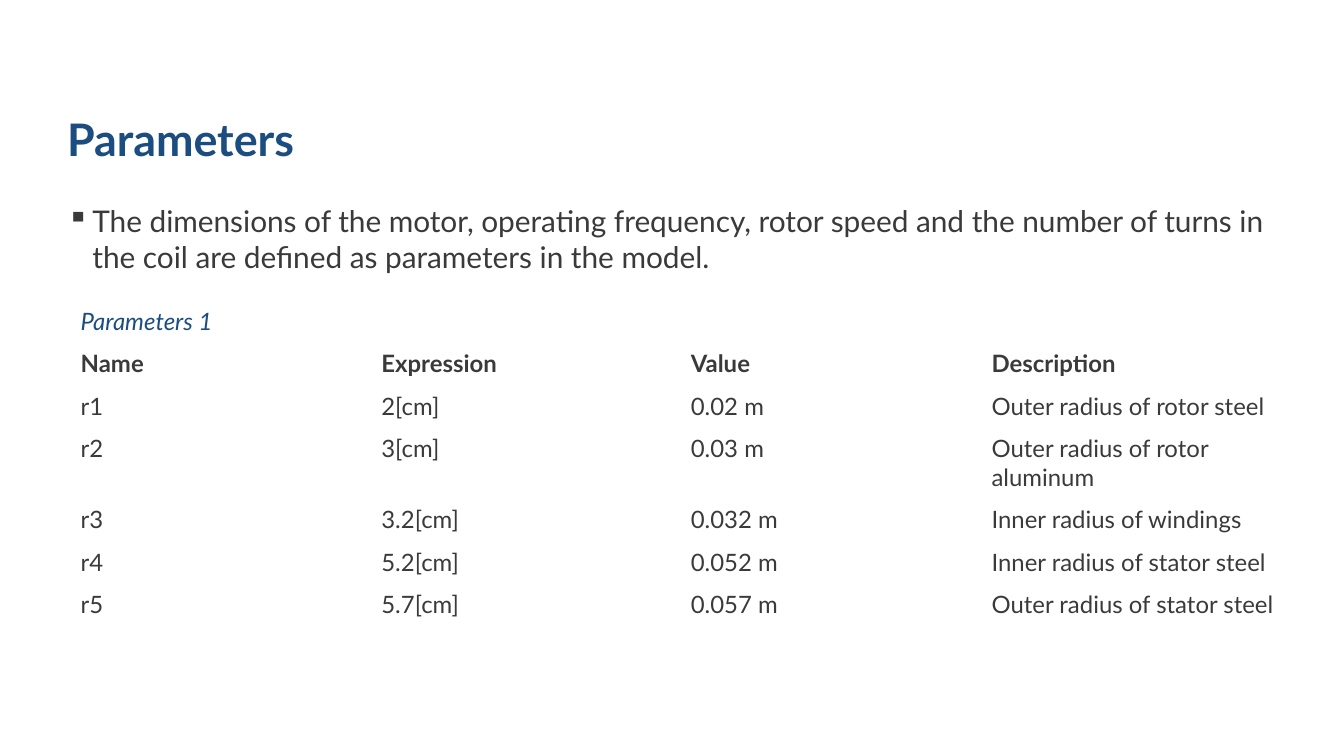
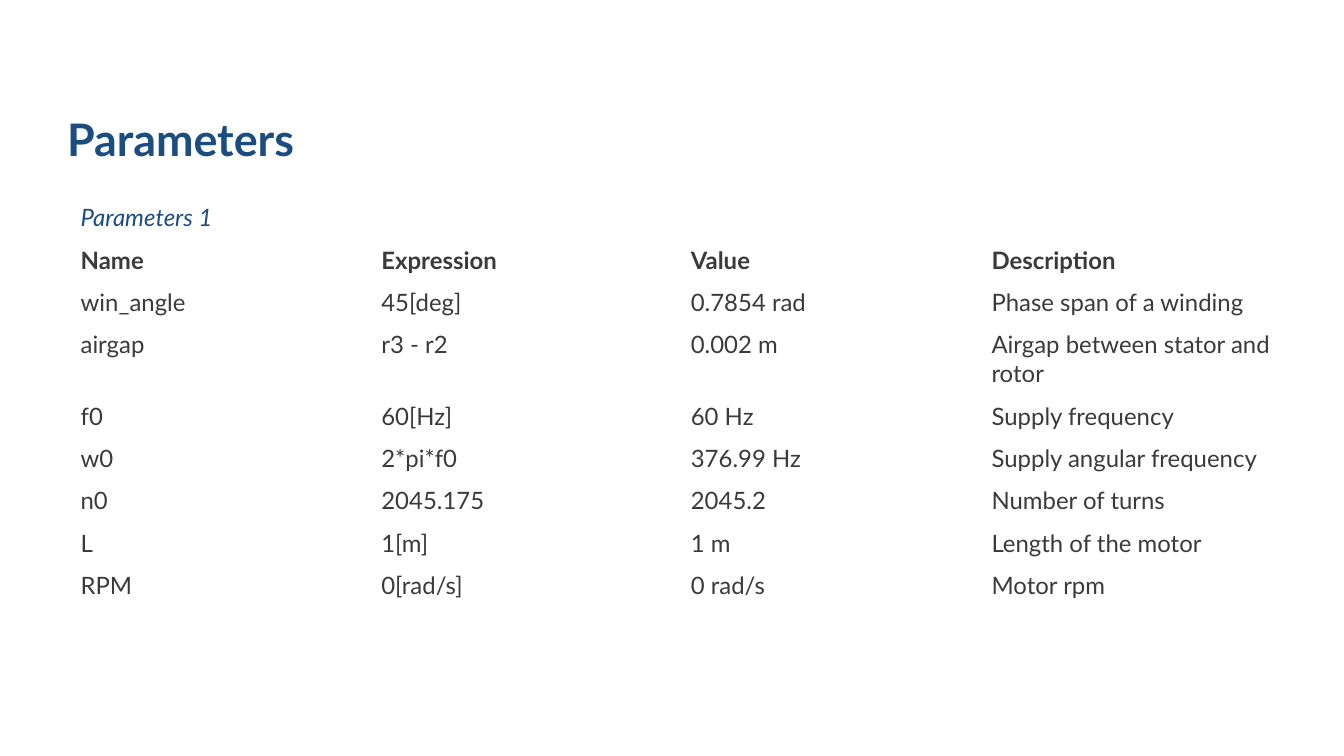
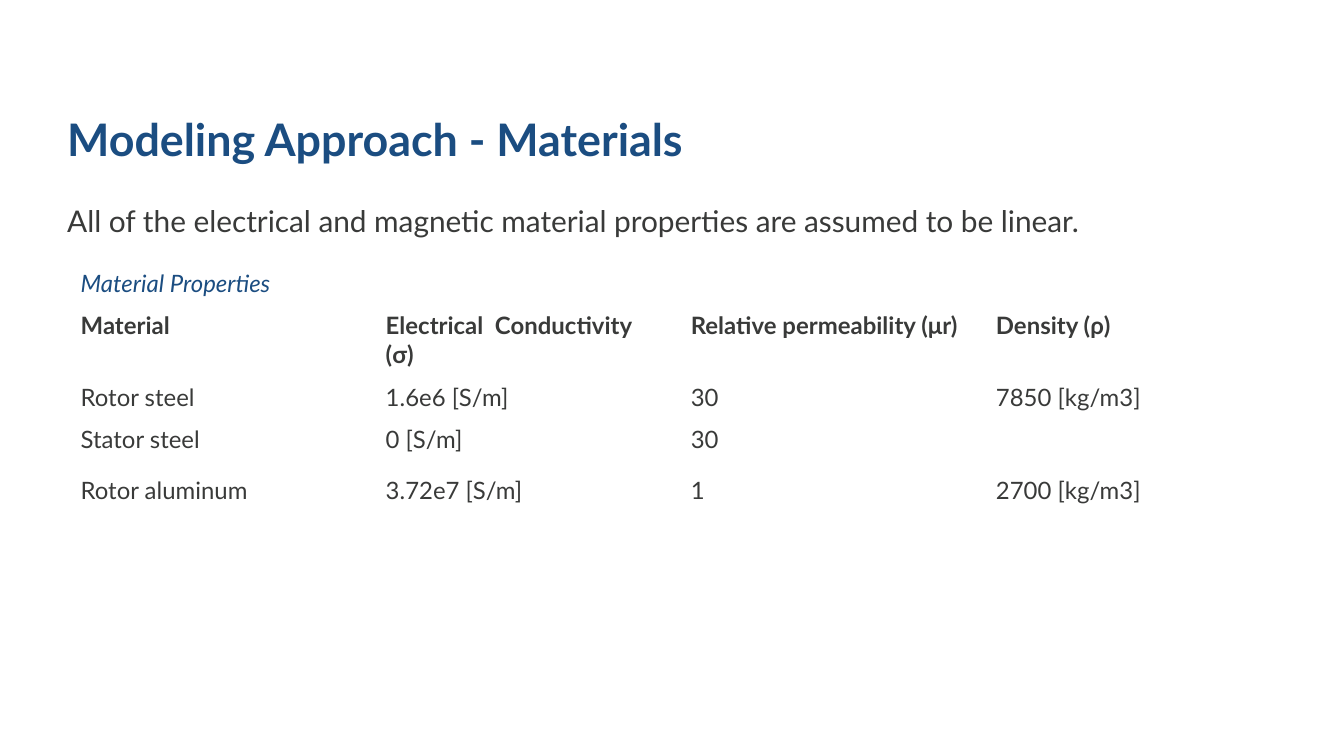
from dataclasses import dataclass

from lxml import etree
from pptx import Presentation
from pptx.dml.color import RGBColor
from pptx.enum.text import MSO_ANCHOR, MSO_AUTO_SIZE, PP_ALIGN
from pptx.oxml.ns import qn
from pptx.util import Pt

LEFT = PP_ALIGN.LEFT
MIDDLE = MSO_ANCHOR.MIDDLE
TOP = MSO_ANCHOR.TOP
NO_AUTOFIT = MSO_AUTO_SIZE.NONE
TITLE_ONLY = 5


@dataclass(frozen=True)
class Theme:
    font: str = "Lato"
    accent: RGBColor = RGBColor(0x1B, 0x4D, 0x81)
    ink: RGBColor = RGBColor(0x39, 0x3A, 0x39)
    title_size: float = 24
    body_size: float = 16
    table_size: float = 12.8
    margin: float = 36
    content_width: float = 653.8
    title_top: float = 46.8
    title_height: float = 58.3
    content_top: float = 105.1
    row_height: float = 20.16
    bullet_indent: float = 13.5


class Deck:
    def __init__(self, theme):
        self.theme = theme
        self.presentation = Presentation()
        self.presentation.slide_width = Pt(720)
        self.presentation.slide_height = Pt(405)
        self.slide = None

    def style(self, paragraph, size, color, bold=False, italic=False):
        paragraph.alignment = LEFT
        font = paragraph.font
        font.name = self.theme.font
        font.size = Pt(size)
        font.color.rgb = color
        font.bold = bold
        font.italic = italic

    def frame(self, shape, anchor):
        text_frame = shape.text_frame
        text_frame.word_wrap = True
        text_frame.auto_size = NO_AUTOFIT
        text_frame.vertical_anchor = anchor
        text_frame.margin_left = 0
        text_frame.margin_right = Pt(7.2)
        text_frame.margin_top = text_frame.margin_bottom = Pt(3.6)
        return text_frame.paragraphs[0]

    def start(self, heading):
        theme = self.theme
        layout = self.presentation.slide_layouts[TITLE_ONLY]
        self.slide = self.presentation.slides.add_slide(layout)
        title = self.slide.shapes.title
        title.left, title.top = Pt(theme.margin), Pt(theme.title_top)
        title.width, title.height = Pt(theme.content_width), Pt(theme.title_height)
        title.text = heading
        paragraph = self.frame(title, MIDDLE)
        paragraph.line_spacing = 0.9
        self.style(paragraph, theme.title_size, theme.accent, bold=True)

    def statement(self, wording, height, bullet=None):
        theme = self.theme
        box = self.slide.shapes.add_textbox(
            Pt(theme.margin), Pt(theme.content_top), Pt(theme.content_width), Pt(height)
        )
        paragraph = self.frame(box, TOP)
        paragraph.text = wording
        if bullet:
            properties = paragraph._p.get_or_add_pPr()
            properties.set("marL", str(Pt(theme.bullet_indent)))
            properties.set("indent", str(-Pt(theme.bullet_indent)))
            etree.SubElement(properties, qn("a:buChar"), char=bullet)
        self.style(paragraph, theme.body_size, theme.ink)

    def table(self, caption, rows, top, column_widths, taller_rows=None):
        theme = self.theme
        row_count = len(rows) + 1
        table = self.slide.shapes.add_table(
            row_count, len(column_widths), Pt(theme.margin), Pt(top),
            Pt(sum(column_widths)), Pt(theme.row_height * row_count),
        ).table
        table.first_row = False
        table.horz_banding = False
        for column, width in zip(table.columns, column_widths):
            column.width = Pt(width)
        for index, row in enumerate(table.rows):
            row.height = Pt((taller_rows or {}).get(index, theme.row_height))
        for cell in table.iter_cells():
            cell.fill.background()
        caption_cell = table.cell(0, 0)
        caption_cell.merge(table.cell(0, len(column_widths) - 1))
        caption_cell.text = caption
        self.style(caption_cell.text_frame.paragraphs[0], theme.table_size,
                   theme.accent, italic=True)
        for row_index, values in enumerate(rows, start=1):
            for column_index, value in enumerate(values):
                cell = table.cell(row_index, column_index)
                cell.text = value
                self.style(cell.text_frame.paragraphs[0], theme.table_size,
                           theme.ink, bold=row_index == 1)


PARAMETER_HEADER = ("Name", "Expression", "Value", "Description")
PARAMETER_WIDTHS = (161.1, 165.8, 161.1, 165.8)
MATERIAL_WIDTHS = (163.45,) * 4

DIMENSIONS = [
    PARAMETER_HEADER,
    ("r1", "2[cm]", "0.02 m", "Outer radius of rotor steel"),
    ("r2", "3[cm]", "0.03 m", "Outer radius of rotor aluminum"),
    ("r3", "3.2[cm]", "0.032 m", "Inner radius of windings"),
    ("r4", "5.2[cm]", "0.052 m", "Inner radius of stator steel"),
    ("r5", "5.7[cm]", "0.057 m", "Outer radius of stator steel"),
]

OPERATION = [
    PARAMETER_HEADER,
    ("win_angle", "45[deg]", "0.7854 rad", "Phase span of a winding"),
    ("airgap", "r3 - r2", "0.002 m", "Airgap between stator and rotor"),
    ("f0", "60[Hz]", "60 Hz", "Supply frequency"),
    ("w0", "2*pi*f0", "376.99 Hz", "Supply angular frequency"),
    ("n0", "2045.175", "2045.2", "Number of turns"),
    ("L", "1[m]", "1 m", "Length of the motor"),
    ("RPM", "0[rad/s]", "0 rad/s", "Motor rpm"),
]

MATERIALS = [
    ("Material", "Electrical  Conductivity (σ)", "Relative permeability (μr)", "Density (ρ)"),
    ("Rotor steel", "1.6e6 [S/m]", "30", "7850 [kg/m3]"),
    ("Stator steel", "0 [S/m]", "30", ""),
    ("Rotor aluminum", "3.72e7 [S/m]", "1", "2700 [kg/m3]"),
]


def main():
    deck = Deck(Theme())

    deck.start("Parameters")
    deck.statement(
        "The dimensions of the motor, operating frequency, rotor speed and the number "
        "of turns in the coil are defined as parameters in the model.",
        46, bullet="▪",
    )
    deck.table("Parameters 1", DIMENSIONS, 160.6, PARAMETER_WIDTHS)

    deck.start("Parameters")
    deck.table("Parameters 1", OPERATION, deck.theme.content_top, PARAMETER_WIDTHS)

    deck.start("Modeling Approach - Materials")
    deck.statement(
        "All of the electrical and magnetic material properties are assumed to be linear.",
        26,
    )
    deck.table("Material Properties", MATERIALS, 140.4, MATERIAL_WIDTHS, taller_rows={3: 27.3})

    deck.presentation.save("out.pptx")


if __name__ == "__main__":
    main()
